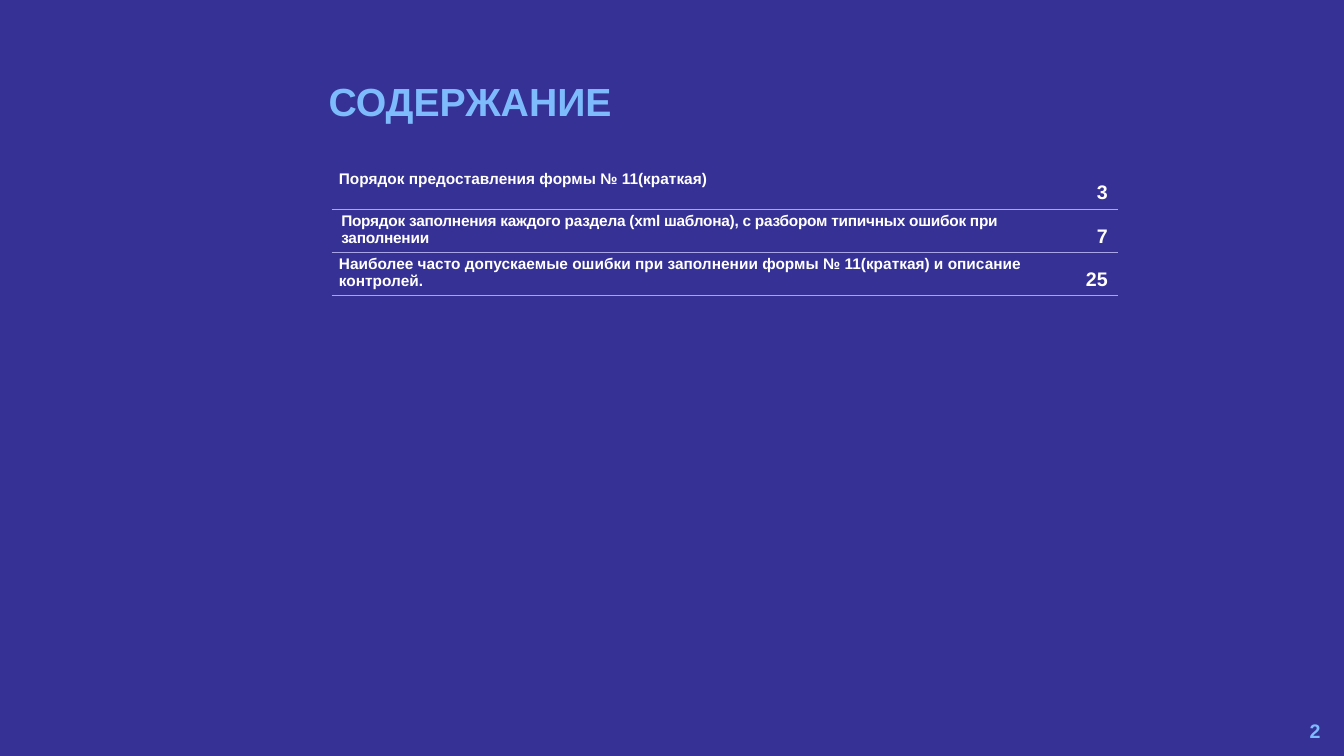
from lxml import etree
from pptx import Presentation
from pptx.dml.color import RGBColor
from pptx.enum.text import MSO_ANCHOR, PP_ALIGN
from pptx.oxml.ns import qn
from pptx.util import Cm, Pt

NAVY = RGBColor(0x36, 0x31, 0x94)
SKY = RGBColor(0x7D, 0xBB, 0xFC)
LILAC = RGBColor(0xA9, 0xA5, 0xE6)
WHITE = RGBColor(0xFF, 0xFF, 0xFF)
LEFT, RIGHT = PP_ALIGN.LEFT, PP_ALIGN.RIGHT
TOP, MIDDLE, BOTTOM = MSO_ANCHOR.TOP, MSO_ANCHOR.MIDDLE, MSO_ANCHOR.BOTTOM

# Section, page, indent, letter spacing in hundredths of a point
CONTENTS = [
    ("Порядок предоставления формы № 11(краткая)", "3", Cm(0), 0),
    ("Порядок заполнения каждого раздела (xml шаблона), с разбором "
     "типичных ошибок при заполнении", "7", Cm(0.06), -20),
    ("Наиболее часто допускаемые ошибки при заполнении формы "
     "№ 11(краткая) и описание контролей.", "25", Cm(0), 0),
]


def write(frame, text, size, color=WHITE, align=LEFT, line_spacing=None,
          indent=0, tracking=0):
    frame.word_wrap = True
    para = frame.paragraphs[0]
    para.alignment = align
    para.line_spacing = line_spacing
    if indent:
        para._p.get_or_add_pPr().set("marL", str(int(indent)))
    span = para.add_run()
    span.text = text
    span.font.name = "Arial"
    span.font.size = Pt(size)
    span.font.bold = True
    span.font.color.rgb = color
    if tracking:
        span._r.get_or_add_rPr().set("spc", str(tracking))


def add_label(page, area, text, size, anchor=TOP, **text_format):
    box = page.shapes.add_textbox(*area)
    box.text_frame.vertical_anchor = anchor
    write(box.text_frame, text, size, **text_format)


def set_borders(cell, **lines):
    """Draw the named sides (lnT, lnB) as (color, width) and hide the rest."""
    properties = cell._tc.get_or_add_tcPr()
    for position, side in enumerate(("lnL", "lnR", "lnT", "lnB")):
        border = etree.Element(qn("a:" + side))
        if lines.get(side):
            color, width = lines[side]
            border.set("w", str(int(Pt(width))))
            fill = etree.SubElement(border, qn("a:solidFill"))
            etree.SubElement(fill, qn("a:srgbClr")).set("val", str(color))
        else:
            etree.SubElement(border, qn("a:noFill"))
        properties.insert(position, border)


def add_contents(page, area):
    left, top, width, height = area
    page_column = Cm(1.75)
    table = page.shapes.add_table(len(CONTENTS), 2, *area).table
    table.first_row = table.horz_banding = False
    table.columns[0].width = width - page_column
    table.columns[1].width = page_column
    rules = [(SKY, 1)] + [(LILAC, 0.75)] * (len(CONTENTS) - 1)

    for index, (section, number, indent, tracking) in enumerate(CONTENTS):
        table.rows[index].height = height // len(CONTENTS)
        section_cell, number_cell = table.rows[index].cells
        section_cell.margin_left = section_cell.margin_right = Cm(0.18)
        section_cell.margin_top = section_cell.margin_bottom = Cm(0.08)
        number_cell.vertical_anchor = BOTTOM
        write(section_cell.text_frame, section, 11,
              indent=indent, tracking=tracking)
        write(number_cell.text_frame, number, 14, align=RIGHT)
        for cell in (section_cell, number_cell):
            cell.fill.background()
            set_borders(cell, lnT=rules[index - 1] if index else None,
                        lnB=rules[index])


def build_contents_page(deck):
    page = deck.slides.add_slide(deck.slide_layouts[6])
    page.background.fill.solid()
    page.background.fill.fore_color.rgb = NAVY
    # Heading
    add_label(page, (Cm(8.03), Cm(1.96), Cm(8.92), Cm(1.65)), "СОДЕРЖАНИЕ",
              28, color=SKY, line_spacing=0.9)
    # Table of contents
    add_contents(page, (Cm(8.36), Cm(4.22), Cm(19.81), Cm(3.15)))
    # Page number
    add_label(page, (Cm(25.91), Cm(17.91), Cm(7.62), Cm(1.02)), "2",
              14, anchor=MIDDLE, color=SKY, align=RIGHT)


def main():
    deck = Presentation()
    deck.slide_width = Cm(33.87)
    deck.slide_height = Cm(19.05)
    build_contents_page(deck)
    deck.save("out.pptx")


if __name__ == "__main__":
    main()
